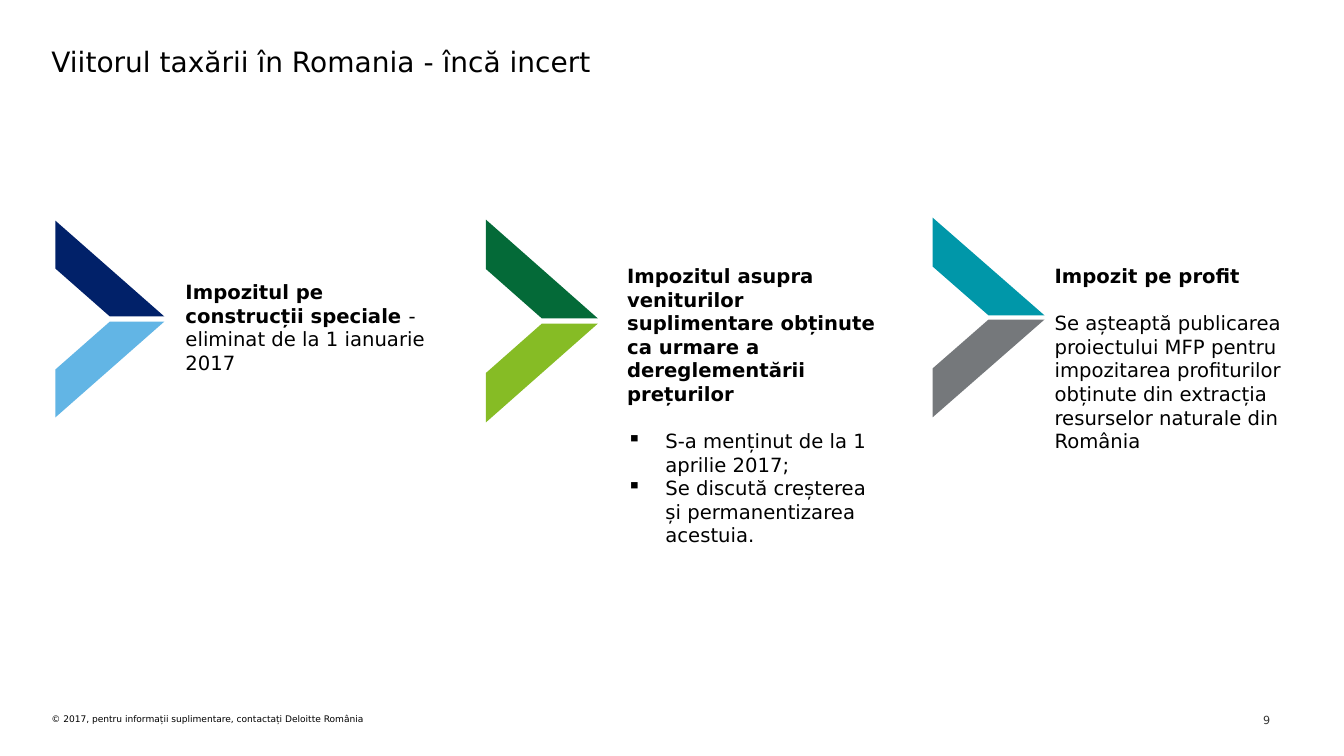
import pptx
import pptx.dml.color
import pptx.enum.shapes
import pptx.enum.text
import pptx.oxml.ns
import pptx.util
from lxml import etree

Inches = pptx.util.Inches
Pt = pptx.util.Pt

COLORS = {
    "black": "000000",
    "charcoal": "353533",
    "navy": "012169",
    "sky": "62B5E5",
    "forest": "046A38",
    "lime": "86BC25",
    "teal": "0097A9",
    "gray": "75787B",
}


def rgb(name):
    return pptx.dml.color.RGBColor.from_string(COLORS[name])


class SlideBuilder:
    """Holds the text style and the slide being built."""

    font = "DejaVu Sans"
    body_size = 14
    blank_line = 16.9
    bullet_indent = 0.38

    def __init__(self, page):
        self.page = page

    def text_box(self, left, top, width, height, inset=0):
        box = self.page.shapes.add_textbox(
            Inches(left), Inches(top), Inches(width), Inches(height))
        frame = box.text_frame
        frame.word_wrap = True
        frame.vertical_anchor = pptx.enum.text.MSO_ANCHOR.TOP
        frame.margin_left = frame.margin_right = Inches(inset)
        frame.margin_top = frame.margin_bottom = Inches(inset / 2)
        return frame

    def paragraph(self, frame, first=False, bullet=None, gap=False):
        para = frame.paragraphs[0] if first else frame.add_paragraph()
        if gap:
            para.space_before = Pt(self.blank_line)
        if bullet:
            properties = para._p.get_or_add_pPr()
            indent = Inches(self.bullet_indent)
            properties.set("marL", str(indent))
            properties.set("indent", str(-indent))
            mark = etree.SubElement(properties, pptx.oxml.ns.qn("a:buChar"))
            mark.set("char", bullet)
        return para

    def span(self, para, text, size=body_size, bold=False, color="black"):
        span = para.add_run()
        span.text = text
        span.font.name = self.font
        span.font.size = Pt(size)
        span.font.bold = bold
        span.font.color.rgb = rgb(color)

    def label(self, text, place, inset=0, **style):
        """Add a text box with a single line of text."""
        frame = self.text_box(*place, inset=inset)
        self.span(self.paragraph(frame, first=True), text, **style)
        return frame

    def stripe(self, left, top, width, height, color, flipped=False):
        stripe = self.page.shapes.add_shape(
            pptx.enum.shapes.MSO_SHAPE.DIAGONAL_STRIPE,
            Inches(left), Inches(top), Inches(width), Inches(height))
        stripe.shadow.inherit = False
        stripe.fill.solid()
        stripe.fill.fore_color.rgb = rgb(color)
        stripe.line.fill.background()
        if flipped:
            stripe._element.spPr.xfrm.set("flipV", "1")

    def chevron(self, left, upper_top, lower_top, width, height, upper, lower):
        self.stripe(left, lower_top, width, height, lower)
        self.stripe(left, upper_top, width, height, upper, flipped=True)


def main():
    deck = pptx.Presentation()
    deck.slide_width = Inches(13.33)
    deck.slide_height = Inches(7.5)
    slide = SlideBuilder(deck.slides.add_slide(deck.slide_layouts[6]))

    slide.label("© 2017, pentru informații suplimentare, contactați Deloitte România",
                (0.51, 7.08, 5.86, 0.11), size=6.5)
    slide.label("Viitorul taxării în Romania - încă incert",
                (0.51, 0.44, 12.31, 0.37), size=20)

    construction = slide.label("Impozitul pe construcții speciale ",
                               (1.84, 2.78, 2.44, 0.94), bold=True)
    slide.span(construction.paragraphs[0], "- eliminat de la 1 ianuarie 2017")

    deregulation = slide.label(
        "Impozitul asupra veniturilor suplimentare obținute ca urmare a "
        "dereglementării prețurilor", (6.22, 2.62, 2.48, 2.83), bold=True)
    points = ["S-a menținut de la 1 aprilie 2017;",
              "Se discută creșterea și permanentizarea acestuia."]
    for index, point in enumerate(points):
        para = slide.paragraph(deregulation, bullet="▪", gap=index == 0)
        slide.span(para, point)

    profit = slide.label("Impozit pe profit", (10.46, 2.62, 2.54, 2.05), bold=True)
    slide.span(slide.paragraph(profit, gap=True),
               "Se așteaptă publicarea proiectului MFP pentru impozitarea "
               "profiturilor obținute din extracția resurselor naturale din România")

    slide.chevron(0.55, 2.19, 3.19, 1.08, 0.95, "navy", "sky")
    slide.chevron(4.82, 2.18, 3.21, 1.11, 0.98, "forest", "lime")
    slide.chevron(9.25, 2.16, 3.17, 1.11, 0.97, "teal", "gray")

    slide.label("9", (12.43, 7.03, 0.39, 0.24), inset=0.1, size=8, color="charcoal")

    deck.save("out.pptx")


if __name__ == "__main__":
    main()
